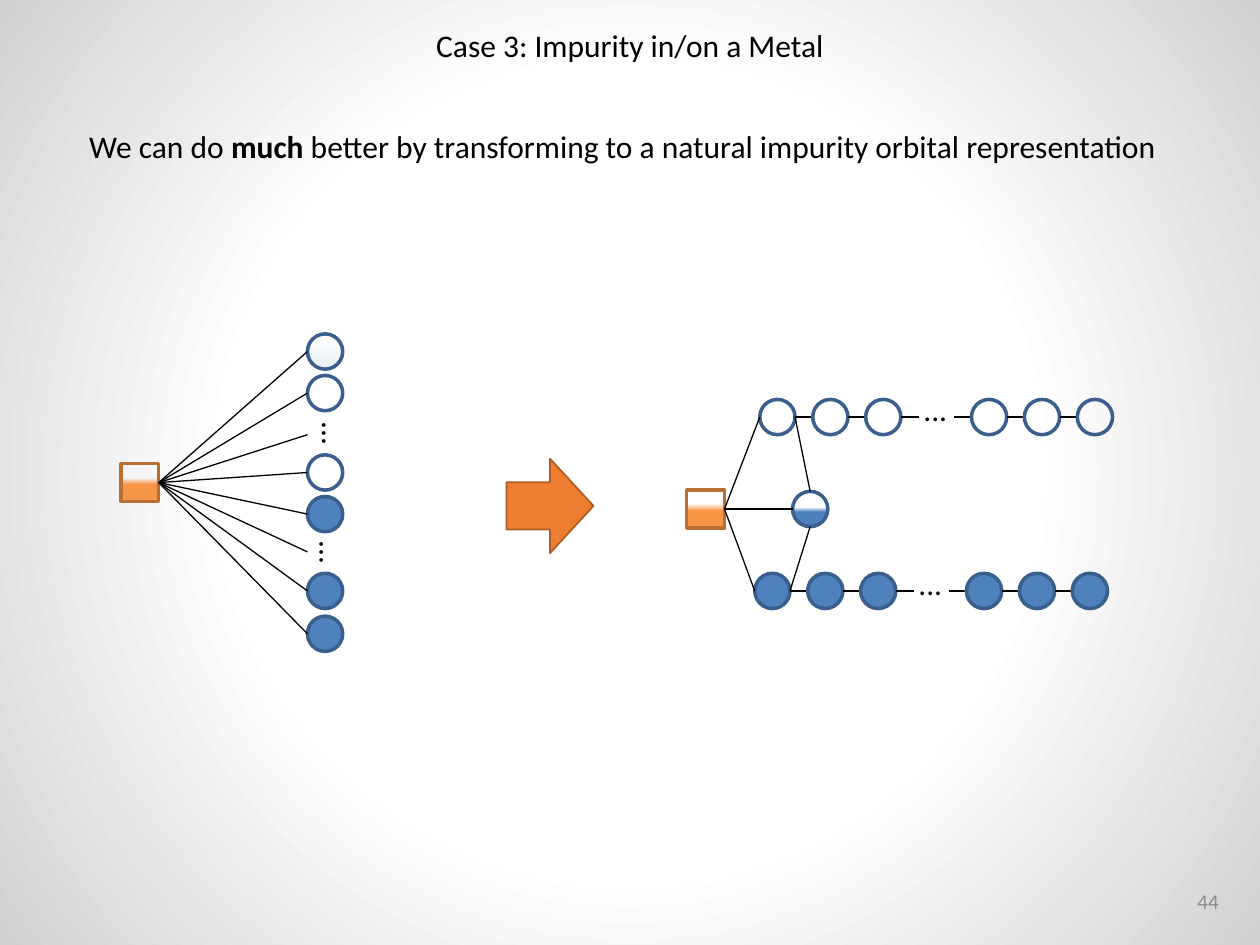
from pptx import Presentation
from pptx.dml.color import RGBColor as Rgb
from pptx.enum.shapes import MSO_CONNECTOR as Link, MSO_SHAPE as Shape
from pptx.enum.text import MSO_ANCHOR as Anchor, PP_ALIGN as Align
from pptx.oxml import parse_xml
from pptx.oxml.ns import nsdecls
from pptx.util import Inches, Pt

COLORS = {
    "black": "000000", "white": "FFFFFF", "edge": "D1D1D1", "number": "8C8C8C",
    "blue": "4F81BD", "blue_line": "3A5F8C",
    "orange": "F79646", "orange_line": "B76F34",
    "arrow": "ED7D31", "arrow_line": "AF5C24",
}
RADIAL = '<a:path path="circle"><a:fillToRect l="50000" t="50000" r="50000" b="50000"/></a:path>'
DOWNWARD = '<a:lin ang="5400000" scaled="0"/>'
FADED = [(0, "blue", 0), (16, "blue", 0), (100, "blue", 13)]
HALF_BLUE = [(0, "blue", 0), (45, "blue", 0), (58, "blue", 100), (100, "blue", 100)]
HALF_ORANGE = [(0, "orange", 0), (38, "orange", 0), (55, "orange", 100), (100, "orange", 100)]
BACKDROP = [(0, "white", 100), (51, "white", 100), (100, "edge", 100)]
SITE = 0.28
RADIUS = SITE / 2
SQUARE = 0.3
STEP = 0.42


class Sketch:
    """Draws styled elements on the current slide."""

    font = "Calibri"

    def __init__(self, page):
        self.page = page

    def color(self, name):
        return Rgb.from_string(COLORS[name])

    def gradient(self, fill, element, stops, direction):
        fill.gradient()
        marks = "".join(
            f'<a:gs pos="{place * 1000}"><a:srgbClr val="{COLORS[name]}">'
            f'<a:alpha val="{alpha * 1000}"/></a:srgbClr></a:gs>'
            for place, name, alpha in stops)
        old = element.xpath(".//a:gradFill")[0]
        new = parse_xml(f'<a:gradFill {nsdecls("a")} rotWithShape="1">'
                        f'<a:gsLst>{marks}</a:gsLst>{direction}</a:gradFill>')
        old.getparent().replace(old, new)

    def backdrop(self, stops):
        self.gradient(self.page.background.fill, self.page._element, stops, RADIAL)

    def text(self, left, top, width, words, size=18, color="black", align=Align.LEFT,
             bold="", wrap=True, turn=0, anchor=Anchor.TOP):
        box = self.page.shapes.add_textbox(
            Inches(left), Inches(top), Inches(width), Inches(0.4))
        box.rotation = turn
        frame = box.text_frame
        frame.word_wrap = wrap
        frame.vertical_anchor = anchor
        para = frame.paragraphs[0]
        para.alignment = align
        for words_part in words:
            span = para.add_run()
            span.text = words_part
            span.font.name = self.font
            span.font.size = Pt(size)
            span.font.bold = words_part == bold
            span.font.color.rgb = self.color(color)

    def shape(self, kind, left, top, width, height, fill, line, weight=2):
        shape = self.page.shapes.add_shape(
            kind, Inches(left), Inches(top), Inches(width), Inches(height))
        shape.shadow.inherit = False
        if fill is None:
            shape.fill.background()
        elif isinstance(fill, list):
            self.gradient(shape.fill, shape._element, fill, DOWNWARD)
        else:
            shape.fill.solid()
            shape.fill.fore_color.rgb = self.color(fill)
        shape.line.color.rgb = self.color(line)
        shape.line.width = Pt(weight)
        return shape

    def site(self, left, middle, fill):
        return self.shape(Shape.OVAL, left, middle - RADIUS, SITE, SITE, fill, "blue_line")

    def impurity(self, left, top):
        return self.shape(Shape.RECTANGLE, left, top, SQUARE, SQUARE,
                          HALF_ORANGE, "orange_line")

    def line(self, start, end, source=None):
        line = self.page.shapes.add_connector(
            Link.STRAIGHT, *(Inches(value) for value in (*start, *end)))
        if source is not None:
            line.begin_connect(source, 3)
        line.line.color.rgb = self.color("black")
        line.line.width = Pt(0.75)
        line._element.spPr.append(parse_xml(f'<a:effectLst {nsdecls("a")}/>'))

    def chain(self, left, middle, fill):
        for index in range(7):
            place = left + index * STEP
            if index == 3:
                self.text(left + 1.2, middle - 0.26, 0.53, ["..."])
            else:
                self.site(place, middle, fill)
            if index < 6:
                self.line((place + SITE, middle), (place + STEP, middle))


def main():
    deck = Presentation()
    deck.slide_width, deck.slide_height = Inches(10), Inches(7.5)
    sketch = Sketch(deck.slides.add_slide(deck.slide_layouts[6]))
    sketch.backdrop(BACKDROP)

    sketch.text(0.61, 0.96, 8.82, [
        "We can do ", "much",
        " better by transforming to a natural impurity orbital representation"], bold="much")
    sketch.shape(Shape.RIGHT_ARROW, 4.02, 3.64, 0.69, 0.75, "arrow", "arrow_line", 1)
    sketch.text(3.34, 0.16, 3.32, ["Case 3: Impurity in/on a Metal"],
                align=Align.CENTER, wrap=False)

    star = sketch.impurity(0.96, 3.68)
    bath = [(2.79, FADED), (3.12, None), (3.75, None),
            (4.08, "blue"), (4.69, "blue"), (5.03, "blue")]
    for middle, fill in bath:
        sketch.site(2.44, middle, fill)
    for middle in [middle for middle, fill in bath] + [3.45, 4.38]:
        sketch.line((1.26, 3.83), (2.44, middle), star)
    for left, top in [(2.43, 4.2), (2.45, 3.25)]:
        sketch.text(left, top, 0.41, ["..."], turn=90)

    natural = sketch.impurity(5.45, 3.89)
    filled, empty, mixed = (5.99, 4.69), (6.03, 3.31), (6.29, 4.04)
    sketch.chain(*filled, "blue")
    sketch.chain(*empty, None)
    sketch.site(*mixed, HALF_BLUE)
    for target in (filled, empty, mixed):
        sketch.line((5.75, 4.04), target, natural)
    for (left, middle), side in [(filled, RADIUS), (empty, -RADIUS)]:
        sketch.line((left + SITE, middle), (mixed[0] + RADIUS, mixed[1] + side))

    sketch.text(7.52, 6.95, 2.25, ["44"], size=12, color="number",
                align=Align.RIGHT, anchor=Anchor.MIDDLE)
    deck.save("out.pptx")


if __name__ == "__main__":
    main()
